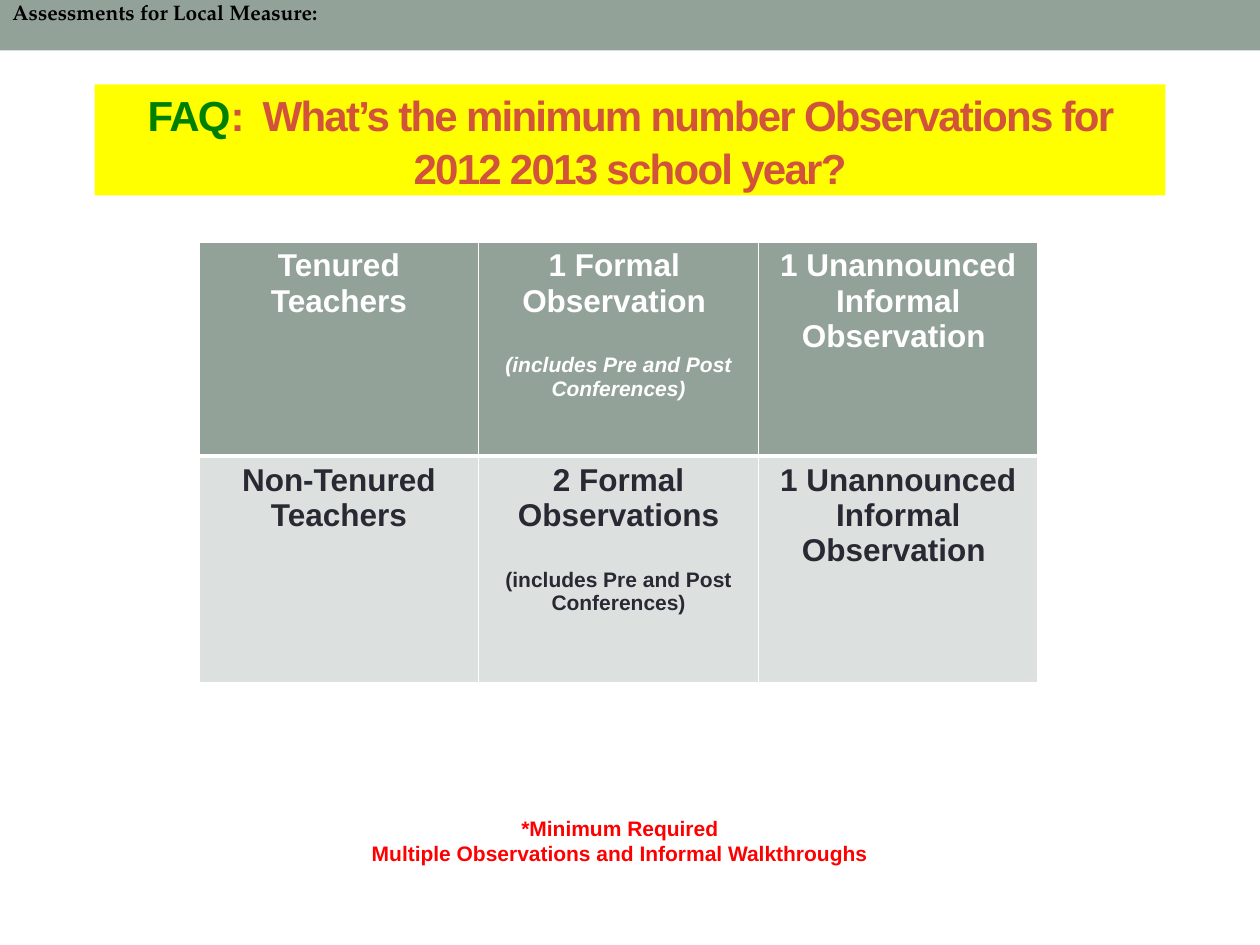
from lxml import etree
from pptx import Presentation
from pptx.dml.color import RGBColor
from pptx.enum.shapes import MSO_SHAPE
from pptx.enum.text import MSO_ANCHOR, MSO_AUTO_SIZE, PP_ALIGN
from pptx.oxml.ns import qn
from pptx.util import Inches, Pt

SAGE = RGBColor(0x93, 0xA2, 0x99)
PALE_SAGE = RGBColor(0xDC, 0xE0, 0xDE)
WHITE = RGBColor(0xFF, 0xFF, 0xFF)
BLACK = RGBColor(0, 0, 0)
INK = RGBColor(0x29, 0x29, 0x34)
YELLOW = RGBColor(0xFF, 0xFF, 0)
GREEN = RGBColor(0, 0x80, 0)
BRICK = RGBColor(0xD2, 0x53, 0x3C)
RED = RGBColor(0xFF, 0, 0)
SANS = "Arial"
SERIF = "TeX Gyre Pagella"


class SlideBuilder:
    def __init__(self, slide):
        self.slide = slide

    def style(self, paragraph, size, color, font=SANS, italic=False):
        for run in paragraph.runs:
            run.font.name = font
            run.font.size = Pt(size)
            run.font.bold = True
            run.font.italic = italic
            run.font.color.rgb = color

    def band(self, left, top, width, height, color):
        band = self.slide.shapes.add_shape(
            MSO_SHAPE.RECTANGLE, Inches(left), Inches(top), Inches(width), Inches(height))
        band.shadow.inherit = False
        band.fill.solid()
        band.fill.fore_color.rgb = color
        band.line.fill.background()

    def title(self, left, top, width, height, parts):
        """Fill the title placeholder with (text, colour) parts on one paragraph."""
        title = self.slide.shapes.title
        title.left, title.top = Inches(left), Inches(top)
        title.width, title.height = Inches(width), Inches(height)
        title.fill.solid()
        title.fill.fore_color.rgb = YELLOW
        frame = title.text_frame
        frame.word_wrap = True
        frame.auto_size = MSO_AUTO_SIZE.NONE
        frame.vertical_anchor = MSO_ANCHOR.MIDDLE
        heading = frame.paragraphs[0]
        heading.alignment = PP_ALIGN.CENTER
        heading.line_spacing = 1.05
        for text, _ in parts:
            heading.add_run().text = text
        self.style(heading, 24, BRICK)
        for run, (_, color) in zip(heading.runs, parts):
            run.font.color.rgb = color
            run.font._element.set("spc", "-100")

    def text(self, left, top, width, height, lines, color, font=SANS,
             align=PP_ALIGN.LEFT, wrap=True):
        frame = self.slide.shapes.add_textbox(
            Inches(left), Inches(top), Inches(width), Inches(height)).text_frame
        frame.word_wrap = wrap
        frame.text = "\n".join(lines)
        for paragraph in frame.paragraphs:
            paragraph.alignment = align
            self.style(paragraph, 12, color, font)

    def border(self, cell, side, width):
        line = etree.Element(qn(f"a:{side}"), w=str(Pt(width)))
        fill = etree.SubElement(line, qn("a:solidFill"))
        etree.SubElement(fill, qn("a:srgbClr"), val=str(WHITE))
        return line

    def cell(self, cell, lines, fill, color, italic_note, bottom):
        """Lines are a heading and, optionally, a smaller note below it."""
        cell.text = "\n".join(lines)
        cell.fill.solid()
        cell.fill.fore_color.rgb = fill
        for index, paragraph in enumerate(cell.text_frame.paragraphs):
            paragraph.alignment = PP_ALIGN.CENTER
            is_note = index > 0
            self.style(paragraph, 12 if is_note else 18, color,
                       italic=is_note and italic_note)
            if is_note:
                paragraph.space_before = Pt(20)
        widths = {"lnL": 1, "lnR": 1, "lnT": 1, "lnB": bottom}
        properties = cell._tc.get_or_add_tcPr()
        for position, (side, width) in enumerate(widths.items()):
            properties.insert(position, self.border(cell, side, width))

    def table(self, left, top, col_width, row_heights, rows, looks):
        column_count = len(rows[0])
        table = self.slide.shapes.add_table(
            len(rows), column_count, Inches(left), Inches(top),
            Inches(col_width * column_count), Inches(sum(row_heights))).table
        for column in table.columns:
            column.width = Inches(col_width)
        for r, (height, contents, look) in enumerate(zip(row_heights, rows, looks)):
            table.rows[r].height = Inches(height)
            for c, lines in enumerate(contents):
                self.cell(table.cell(r, c), lines, *look)


def main():
    prs = Presentation()
    prs.slide_width, prs.slide_height = Inches(10), Inches(7.5)
    builder = SlideBuilder(prs.slides.add_slide(prs.slide_layouts[5]))

    builder.band(0, 0, 10, 0.4, SAGE)
    builder.title(0.75, 0.67, 8.5, 0.88, [
        ("FAQ", GREEN),
        (":  What’s the minimum number Observations for 2012 2013 school year?", BRICK),
    ])
    builder.text(0, -0.05, 2.65, 0.61, ["Assessments for Local Measure:"],
                 BLACK, SERIF, wrap=False)

    note = "(includes Pre and Post Conferences)"
    informal = ["1 Unannounced Informal Observation "]
    observations = [
        [["Tenured\vTeachers"], ["1 Formal  Observation ", note], informal],
        [["Non-Tenured\vTeachers"], ["2 Formal Observations", note], informal],
    ]
    looks = [(SAGE, WHITE, True, 3), (PALE_SAGE, INK, False, 1)]
    builder.table(1.58, 1.92, 2.22, [1.7, 1.8], observations, looks)

    builder.text(2.42, 6.42, 5, 0.81,
                 ["*Minimum Required", "Multiple Observations and Informal Walkthroughs"],
                 RED, align=PP_ALIGN.CENTER)
    prs.save("out.pptx")


if __name__ == "__main__":
    main()
